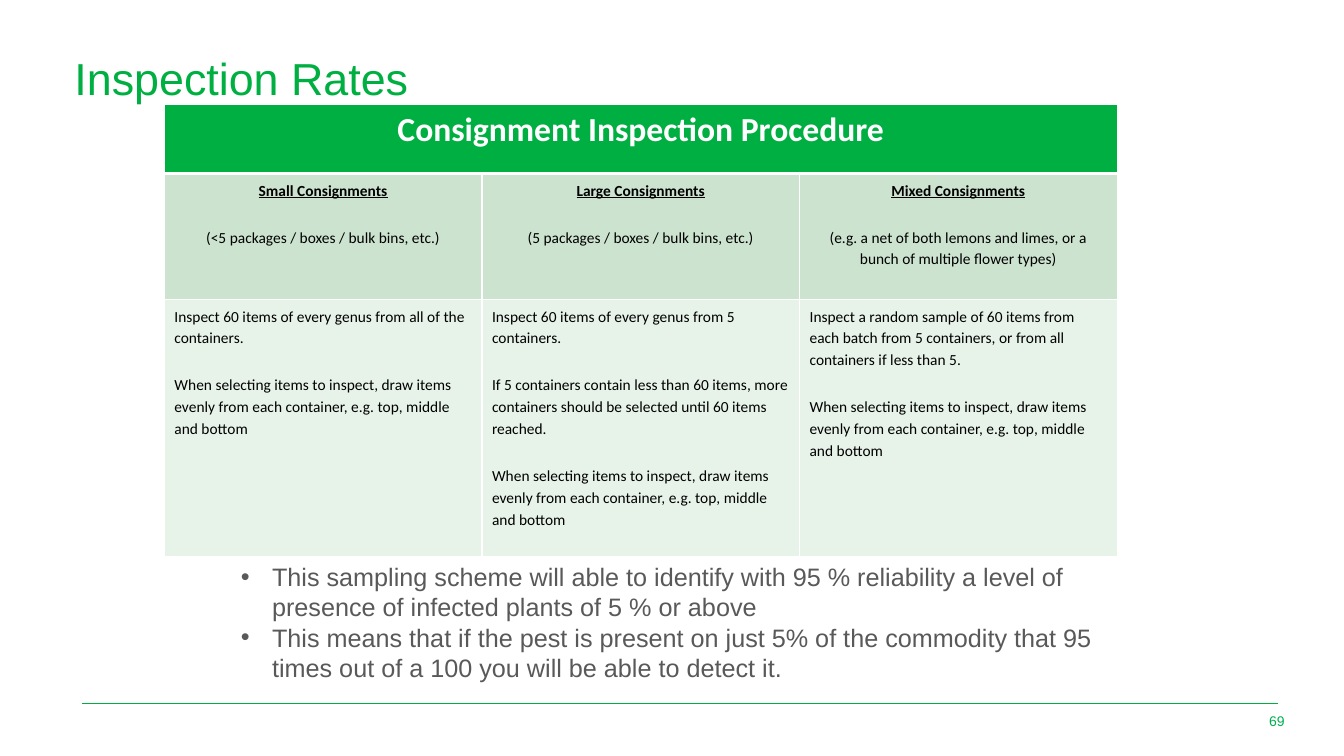
from lxml.etree import SubElement
from pptx import Presentation
from pptx.dml.color import RGBColor
from pptx.enum.shapes import MSO_CONNECTOR
from pptx.enum.text import MSO_ANCHOR, PP_ALIGN
from pptx.oxml.ns import qn
from pptx.util import Inches, Pt

TITLE = "Inspection Rates"
PAGE_NUMBER = "69"
TABLE_TITLE = "Consignment Inspection Procedure"
DRAW_EVENLY = ("When selecting items to inspect, draw items evenly from each "
               "container, e.g. top, middle and bottom")
CONSIGNMENTS = [
    ("Small Consignments", "(<5 packages / boxes / bulk bins, etc.)",
     ["Inspect 60 items of every genus from all of the containers.", DRAW_EVENLY]),
    ("Large Consignments", "(5 packages / boxes / bulk bins, etc.)",
     ["Inspect 60 items of every genus from 5 containers.",
      "If 5 containers contain less than 60 items, more containers should be "
      "selected until 60 items reached.", DRAW_EVENLY]),
    ("Mixed Consignments",
     "(e.g. a net of both lemons and limes, or a bunch of multiple flower types)",
     ["Inspect a random sample of 60 items from each batch from 5 containers, "
      "or from all containers if less than 5.", DRAW_EVENLY]),
]
BULLETS = [
    "This sampling scheme will able to identify with 95 % reliability a level of "
    "presence of infected plants of 5 % or above",
    "This means that if the pest is present on just 5% of the commodity that 95 "
    "times out of a 100 you will be able to detect it.",
]

GREEN, PAGE_GREEN, GREY = "00AF41", "00B050", "595959"
WHITE, BLACK = "FFFFFF", "000000"
ROW_FILLS = [GREEN, "CCE3CF", "E7F2E9"]
ROW_HEIGHTS = [0.68, 1.25, 2.55]
COLUMN_WIDTH = 3.15
THIN, THICK = 1, 3


def color(hex_value):
    return RGBColor.from_string(hex_value)


def write(text_frame, lines, font_name, size, hex_value):
    text_frame.text = "\n".join(lines)
    for paragraph in text_frame.paragraphs:
        for run in paragraph.runs:
            run.font.name = font_name
            run.font.size = Pt(size)
            run.font.color.rgb = color(hex_value)
    return text_frame.paragraphs


def add_text(slide, box, lines, size, hex_value):
    text_frame = slide.shapes.add_textbox(*map(Inches, box)).text_frame
    text_frame.word_wrap = True
    return text_frame, write(text_frame, lines, "Arial", size, hex_value)


def add_bullet(paragraph, indent):
    properties = paragraph._p.get_or_add_pPr()
    properties.set("marL", str(Inches(indent)))
    properties.set("indent", str(-Inches(indent)))
    SubElement(properties, qn("a:buFont"), typeface="Arial")
    SubElement(properties, qn("a:buChar"), char="•")


def style_cell(cell, row_index):
    """Draw the white borders, then fill; the header has a thick lower edge."""
    widths = {"L": THIN, "R": THIN,
              "T": THICK if row_index == 1 else THIN,
              "B": THICK if row_index == 0 else THIN}
    properties = cell._tc.get_or_add_tcPr()
    for side, width in widths.items():
        border = SubElement(properties, qn(f"a:ln{side}"), w=str(Pt(width)))
        fill = SubElement(border, qn("a:solidFill"))
        SubElement(fill, qn("a:srgbClr"), val=WHITE)
    cell.fill.solid()
    cell.fill.fore_color.rgb = color(ROW_FILLS[row_index])


def write_cell(cell, lines, alignment):
    paragraphs = write(cell.text_frame, lines, "Calibri", 11, BLACK)
    for paragraph in paragraphs:
        paragraph.alignment = alignment
        paragraph.line_spacing = 1.15
        paragraph.space_before = Pt(12)
        paragraph.space_after = Pt(6)
        paragraph.runs[0].font.bold = False
    return paragraphs


def add_procedure_table(slide):
    columns = len(CONSIGNMENTS)
    table = slide.shapes.add_table(
        len(ROW_HEIGHTS), columns, Inches(1.63), Inches(1.04),
        Inches(COLUMN_WIDTH * columns), Inches(sum(ROW_HEIGHTS))).table
    for column in table.columns:
        column.width = Inches(COLUMN_WIDTH)
    for row_index, height in enumerate(ROW_HEIGHTS):
        table.rows[row_index].height = Inches(height)
        for cell in table.rows[row_index].cells:
            style_cell(cell, row_index)

    header = table.cell(0, 0)
    header.merge(table.cell(0, columns - 1))
    heading = write(header.text_frame, [TABLE_TITLE], "Calibri", 24, WHITE)[0]
    heading.alignment = PP_ALIGN.CENTER
    heading.runs[0].font.bold = True

    for index, (name, scope, steps) in enumerate(CONSIGNMENTS):
        name_paragraph = write_cell(table.cell(1, index), [name, scope], PP_ALIGN.CENTER)[0]
        name_paragraph.runs[0].font.bold = True
        name_paragraph.runs[0].font.underline = True
        write_cell(table.cell(2, index), steps, PP_ALIGN.LEFT)


def main():
    presentation = Presentation()
    presentation.slide_width = Inches(13.33)
    presentation.slide_height = Inches(7.5)
    slide = presentation.slides.add_slide(presentation.slide_layouts[6])

    footer_line = slide.shapes.add_connector(
        MSO_CONNECTOR.STRAIGHT, *map(Inches, (0.81, 6.98, 12.68, 6.98)))
    footer_line.line.color.rgb = color(GREEN)
    footer_line.line.width = Pt(0.5)
    SubElement(footer_line._element.spPr, qn("a:effectLst"))

    _, title = add_text(slide, (0.64, 0.51, 12.05, 0.53), [TITLE], 32, GREEN)
    title[0].line_spacing = 0.9

    page_frame, page = add_text(slide, (12.24, 6.95, 0.6, 0.4), [PAGE_NUMBER], 10, PAGE_GREEN)
    page_frame.vertical_anchor = MSO_ANCHOR.MIDDLE
    page[0].alignment = PP_ALIGN.RIGHT

    _, bullets = add_text(slide, (2.29, 5.52, 8.91, 1.31), BULLETS, 18, GREY)
    for paragraph in bullets:
        add_bullet(paragraph, 0.31)

    add_procedure_table(slide)
    presentation.save("out.pptx")


if __name__ == "__main__":
    main()
